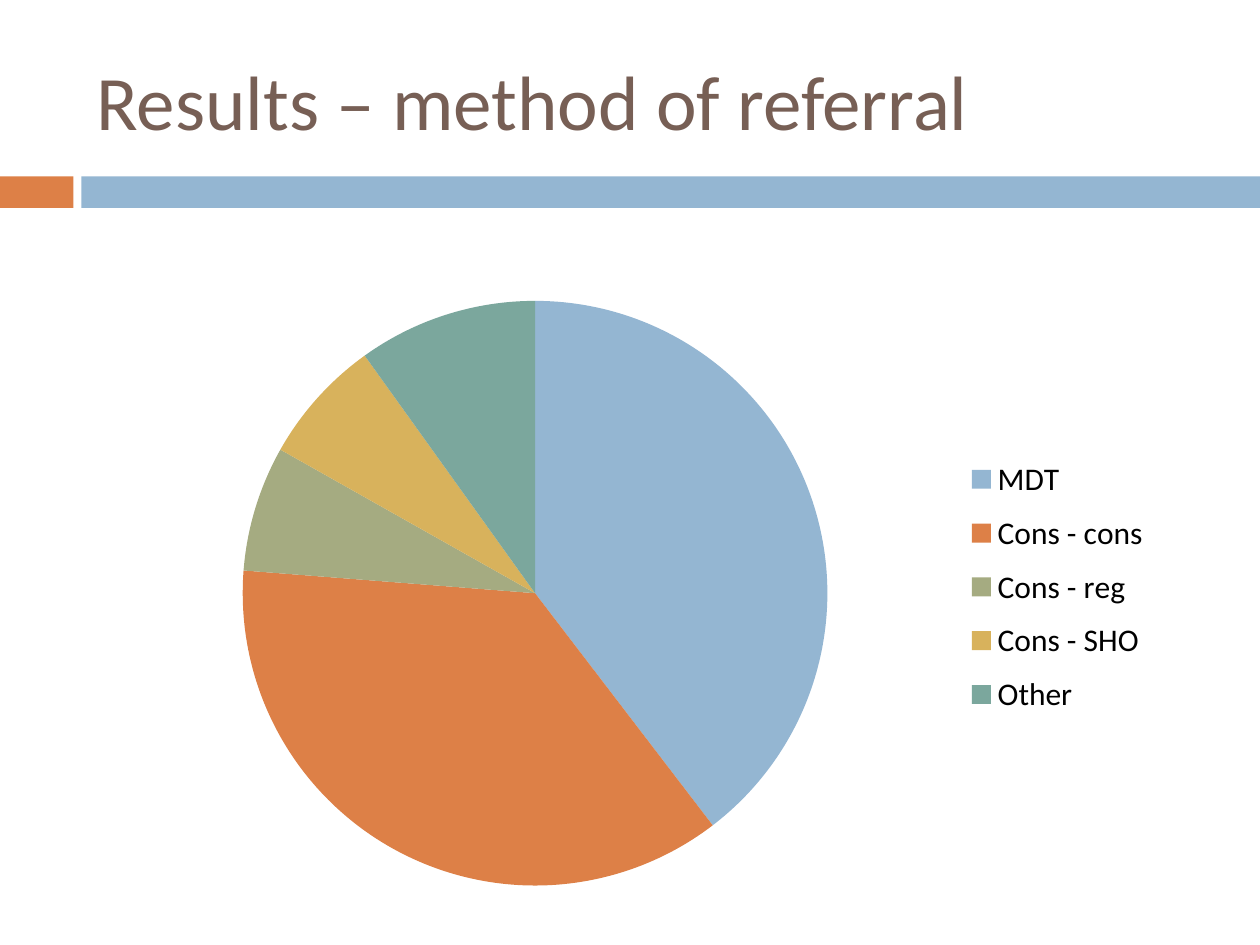
from lxml.etree import SubElement
from pptx import Presentation
from pptx.chart.data import CategoryChartData
from pptx.dml.color import RGBColor
from pptx.enum.chart import XL_CHART_TYPE, XL_LEGEND_POSITION
from pptx.enum.shapes import MSO_SHAPE
from pptx.enum.text import MSO_ANCHOR
from pptx.oxml.ns import qn
from pptx.util import Pt

FONT = "Calibri"
BLUE = RGBColor(0x94, 0xB6, 0xD2)
ORANGE = RGBColor(0xDD, 0x80, 0x47)
GREEN = RGBColor(0xA5, 0xAB, 0x81)
GOLD = RGBColor(0xD8, 0xB2, 0x5C)
TEAL = RGBColor(0x7B, 0xA7, 0x9D)
BROWN = RGBColor(0x77, 0x5F, 0x55)
BLACK = RGBColor(0, 0, 0)

REFERRALS = [
    ("MDT", 40, BLUE),
    ("Cons - cons", 37, ORANGE),
    ("Cons - reg", 7, GREEN),
    ("Cons - SHO", 7, GOLD),
    ("Other", 10, TEAL),
]


def add_band(slide, left, width, color):
    band = slide.shapes.add_shape(
        MSO_SHAPE.RECTANGLE, Pt(left), Pt(100.8), Pt(width), Pt(18))
    band.shadow.inherit = False
    band.fill.solid()
    band.fill.fore_color.rgb = color
    band.line.fill.background()


def add_title(slide, text):
    box = slide.shapes.add_textbox(Pt(48), Pt(18), Pt(642), Pt(78))
    frame = box.text_frame
    frame.word_wrap = True
    frame.vertical_anchor = MSO_ANCHOR.MIDDLE
    frame.text = text
    font = frame.paragraphs[0].runs[0].font
    font.name = FONT
    font.size = Pt(44)
    font.color.rgb = BROWN


def place_legend(legend, left, top, width, height):
    """Fix the legend's frame, in fractions of the chart."""
    element = legend._element
    for old in element.findall(qn("c:layout")):
        element.remove(old)
    layout = SubElement(element, qn("c:layout"))
    element.find(qn("c:legendPos")).addnext(layout)
    manual = SubElement(layout, qn("c:manualLayout"))
    settings = [("xMode", "edge"), ("yMode", "edge"),
                ("x", left), ("y", top), ("w", width), ("h", height)]
    for name, value in settings:
        SubElement(manual, qn(f"c:{name}")).set("val", str(value))


def add_pie(slide, referrals):
    names, values, colors = zip(*referrals)
    data = CategoryChartData()
    data.categories = names
    data.add_series("Series 1", values)
    chart = slide.shapes.add_chart(
        XL_CHART_TYPE.PIE, Pt(42.5), Pt(162), Pt(642), Pt(354), data).chart
    chart.has_title = False
    chart.font.name = FONT
    chart.font.size = Pt(18)
    chart.font.color.rgb = BLACK

    # Legend
    chart.has_legend = True
    chart.legend.position = XL_LEGEND_POSITION.RIGHT
    chart.legend.include_in_layout = False
    place_legend(chart.legend, 0.79, 0.26, 0.17, 0.46)

    # Slice colours
    plot = chart.plots[0]
    plot.vary_by_categories = True
    for index, color in enumerate(colors):
        fill = plot.series[0].points[index].format.fill
        fill.solid()
        fill.fore_color.rgb = color


def main():
    deck = Presentation()
    deck.slide_width, deck.slide_height = Pt(720), Pt(540)
    slide = deck.slides.add_slide(deck.slide_layouts[6])

    # Divider bands under the title
    add_band(slide, 0, 42, ORANGE)
    add_band(slide, 46.5, 673.5, BLUE)

    # Title and chart
    add_title(slide, "Results – method of referral")
    add_pie(slide, REFERRALS)

    deck.save("out.pptx")


if __name__ == "__main__":
    main()
